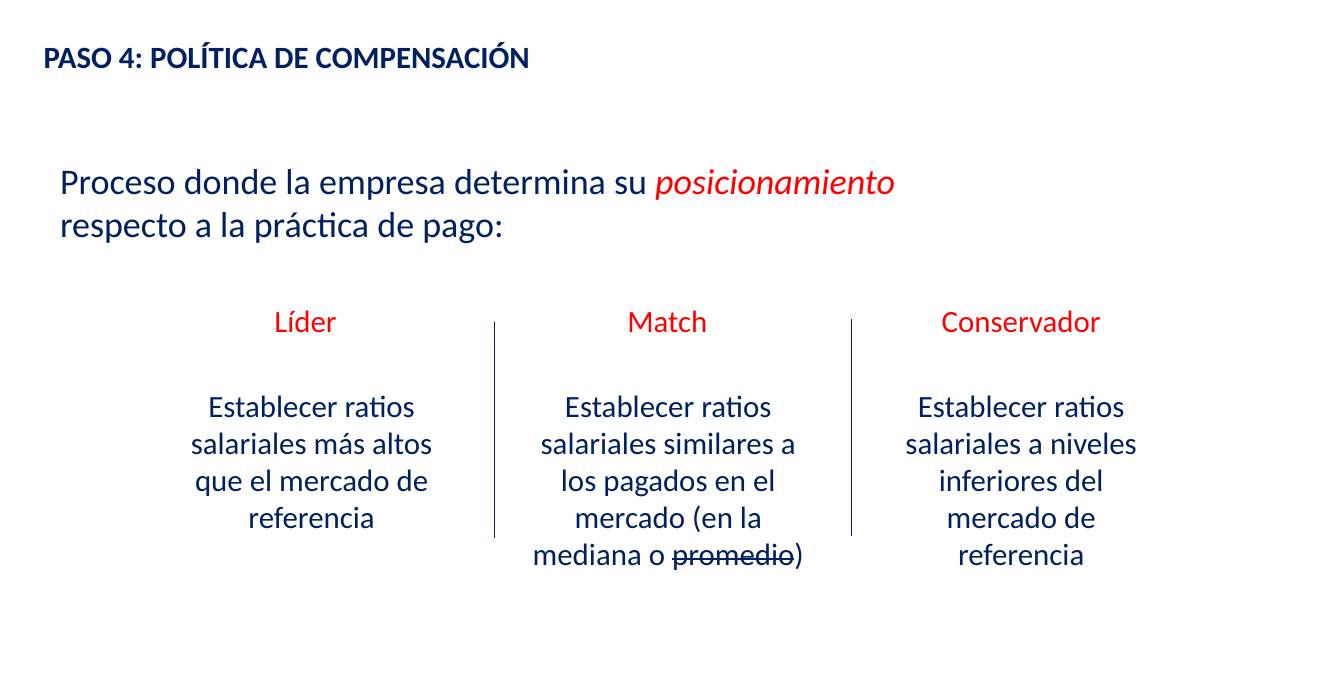
from dataclasses import dataclass

from lxml import etree
from pptx import Presentation
from pptx.dml.color import RGBColor
from pptx.enum import shapes, text
from pptx.oxml import ns
from pptx.util import Inches, Pt


@dataclass(frozen=True)
class Theme:
    font: str = "Calibri"
    navy: RGBColor = RGBColor(0x00, 0x20, 0x60)
    red: RGBColor = RGBColor(0xFF, 0x00, 0x00)
    lead: int = 28
    base: int = 24
    rule: float = 0.5


THEME = Theme()
LEFT, CENTER = text.PP_ALIGN.LEFT, text.PP_ALIGN.CENTER

# Left edge, then heading offset and width, then body height and its runs
COLUMNS = [
    (1.78, 0.12, 2.8, 1.72, "Líder",
     [("Establecer ratios salariales más altos que el mercado de referencia", "")]),
    (5.63, 0.34, 2.47, 2.12, "Match",
     [("Establecer ratios salariales similares a los pagados en el mercado "
       "(en la mediana o ", ""), ("promedio", "strike"), (")", "")]),
    (9.44, 0.25, 2.67, 2.12, "Conservador",
     [("Establecer ratios salariales a niveles inferiores del mercado de "
       "referencia", "")]),
]
RULES = [(5.34, 3.47), (9.19, 3.44)]


def write(shape, parts, size, align=LEFT, wrap=True):
    """Fill a shape with (wording, style) runs; style is "", bold, key, red or strike."""
    frame = shape.text_frame
    frame.word_wrap = wrap
    frame.auto_size = text.MSO_AUTO_SIZE.NONE
    frame.vertical_anchor = text.MSO_ANCHOR.TOP
    para = frame.paragraphs[0]
    para.alignment = align
    for words, style in parts:
        run = para.add_run()
        run.text = words
        font = run.font
        font.name, font.size = THEME.font, Pt(size)
        font.color.rgb = THEME.red if style in ("key", "red") else THEME.navy
        font.bold = style == "bold"
        font.italic = style == "key"
        if style == "strike":
            run._r.get_or_add_rPr().set("strike", "sngStrike")


def add_text(parent, box, parts, size, align=LEFT):
    shape = parent.add_textbox(*map(Inches, box))
    write(shape, parts, size, align)


def add_title(slide, box):
    title = slide.shapes.title
    title.left, title.top, title.width, title.height = map(Inches, box)
    write(title, [("PASO 4: POLÍTICA DE COMPENSACIÓN", "bold")],
          THEME.base, wrap=False)


def add_intro(slide, box):
    parts = [("Proceso donde la empresa determina su ", ""),
             ("posicionamiento ", "key"),
             ("respecto a la práctica de pago:", "")]
    add_text(slide.shapes, box, parts, THEME.lead)


def add_column(slide, box, shift, span, head, body):
    """Group a heading with the body text that starts 0.91 inches below it."""
    left, top, width, height = box
    drop = 0.91
    group = slide.shapes.add_group_shape().shapes
    add_text(group, (left + shift, top, span, 0.5), [(head, "red")],
             THEME.base, CENTER)
    add_text(group, (left, top + drop, width, height - drop), body,
             THEME.base, CENTER)


def add_rule(slide, left, top, height):
    line = slide.shapes.add_connector(
        shapes.MSO_CONNECTOR.STRAIGHT,
        *map(Inches, (left, top, left, top + height)))
    line.line.color.rgb = THEME.navy
    line.line.width = Pt(THEME.rule)
    etree.SubElement(line._element.spPr, ns.qn("a:effectLst"))


def main():
    deck = Presentation()
    deck.slide_width, deck.slide_height = Inches(14.51), Inches(7.5)
    slide = deck.slides.add_slide(deck.slide_layouts.get_by_name("Title Only"))
    add_title(slide, (0.37, 0.36, 5.5, 0.5))
    add_intro(slide, (0.55, 1.66, 10.42, 1.04))
    for left, shift, span, height, head, body in COLUMNS:
        add_column(slide, (left, 3.21, 3.17, 0.91 + height),
                   shift, span, head, body)
    for left, top in RULES:
        add_rule(slide, left, top, 2.34)
    deck.save("out.pptx")


if __name__ == "__main__":
    main()
